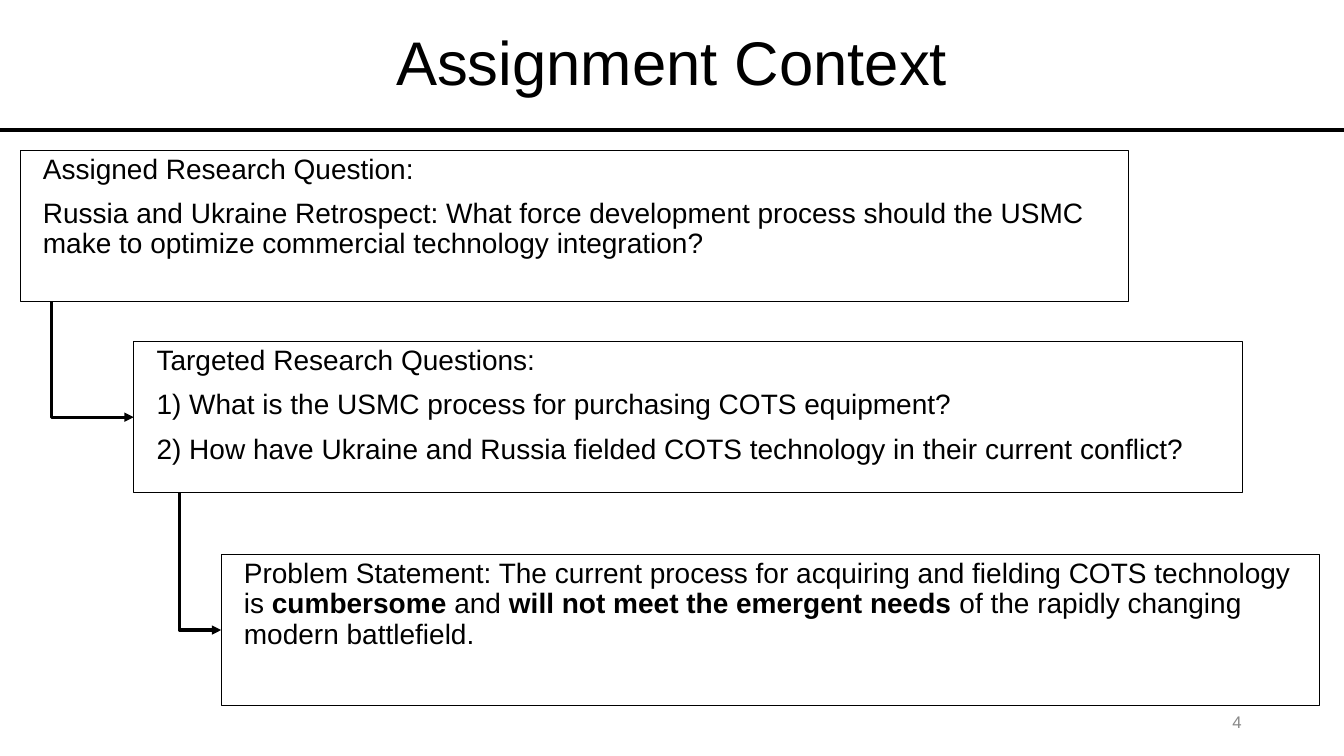
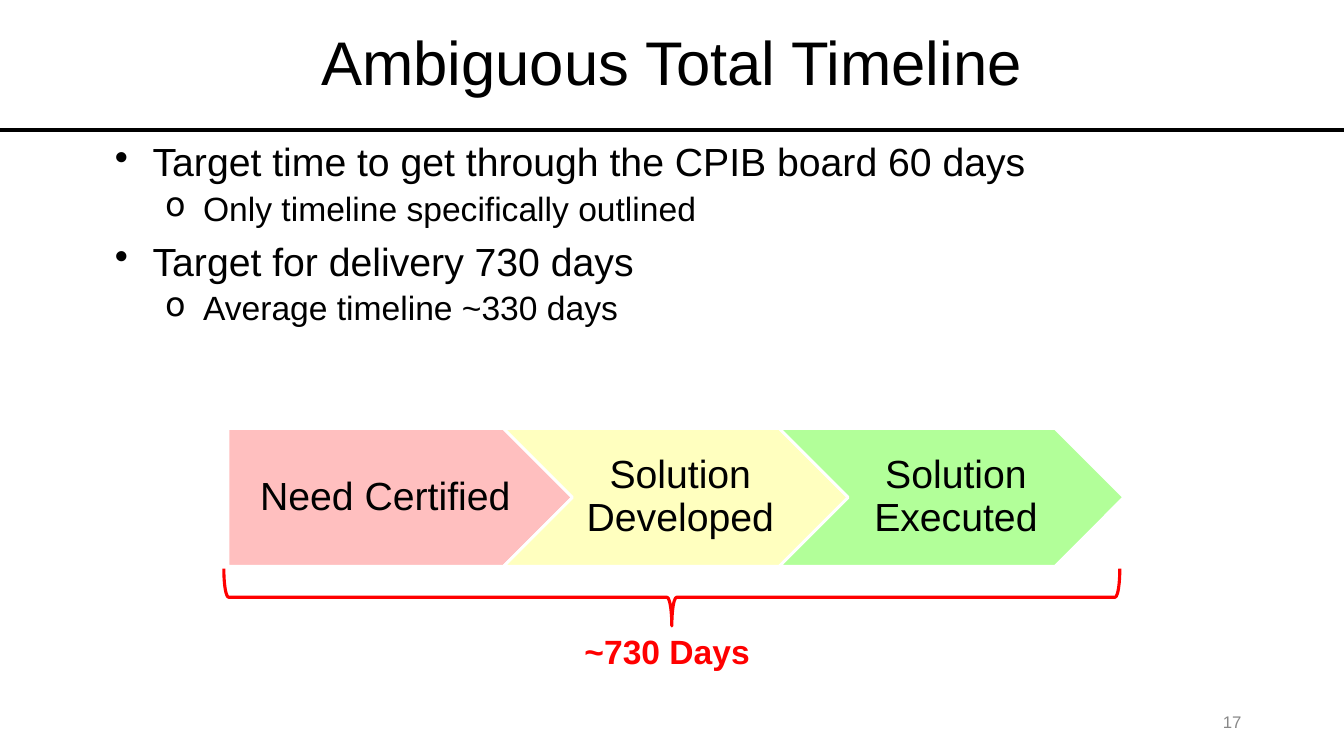
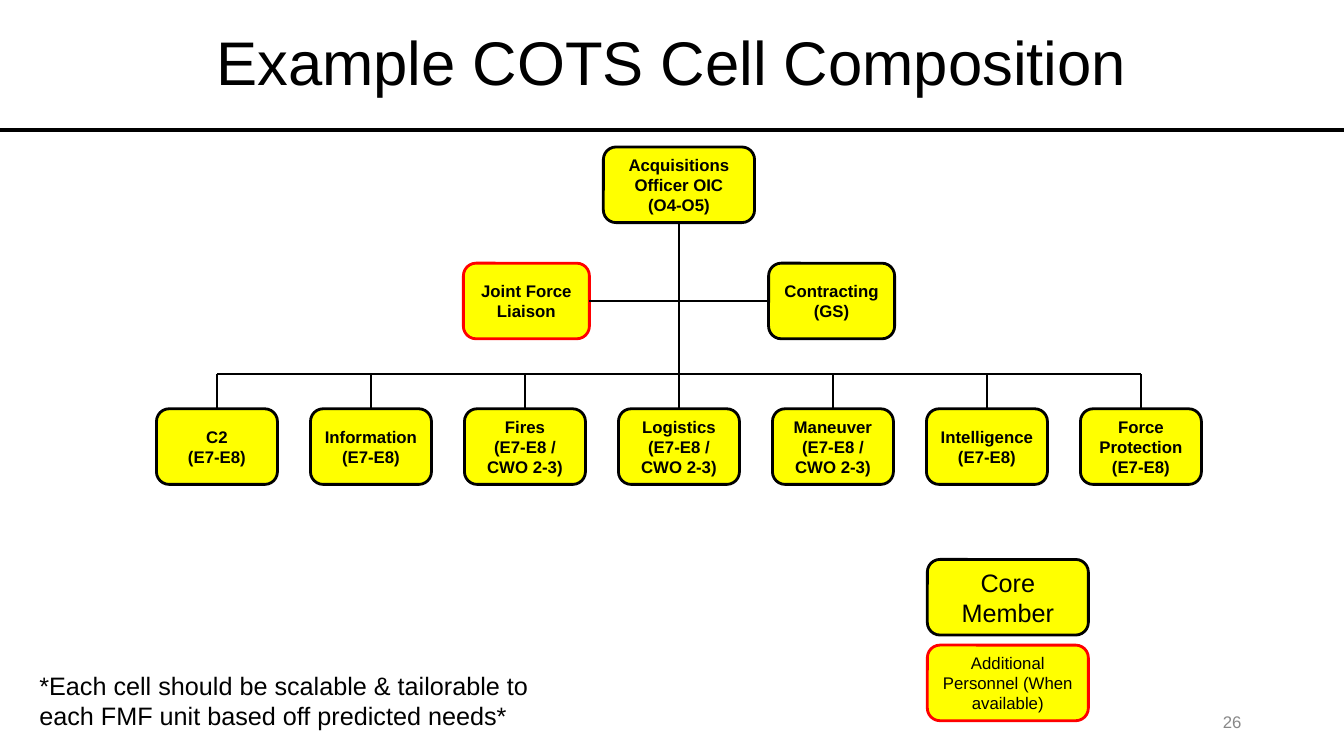
from pptx import Presentation
from pptx.dml.color import RGBColor
from pptx.enum.shapes import MSO_CONNECTOR, MSO_SHAPE
from pptx.enum.text import MSO_ANCHOR, MSO_AUTO_SIZE, PP_ALIGN
from pptx.oxml.ns import qn
from pptx.util import Pt
from lxml.etree import SubElement

COLORS = {
    "black": "000000",
    "white": "FFFFFF",
    "gray": "888888",
    "red": "FF0000",
    "yellow": "FFFF00",
    "pink": "FFBFBF",
    "cream": "FFFFBF",
    "green": "B2FF99",
}
FONT = "Arial"
SLIDE_WIDTH, SLIDE_HEIGHT = 960, 540
RULE_TOP = 93


def rgb(color):
    return RGBColor.from_string(COLORS[color])


def add_run(paragraph, text, size, color="black", bold=False):
    run = paragraph.add_run()
    run.text = text
    run.font.name = FONT
    run.font.size = Pt(size)
    run.font.bold = bold
    run.font.color.rgb = rgb(color)


def next_paragraph(frame, index):
    return frame.add_paragraph() if index else frame.paragraphs[0]


def write_text(shape, paragraphs, size, color="black", bold=False, align=PP_ALIGN.LEFT,
               anchor=MSO_ANCHOR.TOP, line_spacing=1.0, gap=0):
    frame = shape.text_frame
    frame.word_wrap = True
    frame.auto_size = MSO_AUTO_SIZE.NONE
    frame.vertical_anchor = anchor
    for index, runs in enumerate(paragraphs):
        paragraph = next_paragraph(frame, index)
        paragraph.alignment = align
        paragraph.line_spacing = line_spacing
        paragraph.space_before = Pt(gap if index else 0)
        if isinstance(runs, str):
            runs = [(runs, bold)]
        for text, run_bold in runs:
            add_run(paragraph, text, size, color, run_bold)


def add_box(slide, kind, left, top, width, height, fill=None, line="black", line_width=2):
    shape = slide.shapes.add_shape(kind, Pt(left), Pt(top), Pt(width), Pt(height))
    shape.shadow.inherit = False
    if fill:
        shape.fill.solid()
        shape.fill.fore_color.rgb = rgb(fill)
    else:
        shape.fill.background()
    shape.line.color.rgb = rgb(line)
    shape.line.width = Pt(line_width)
    return shape


def add_label(slide, left, top, width, height, text, size, **style):
    box = slide.shapes.add_textbox(Pt(left), Pt(top), Pt(width), Pt(height))
    write_text(box, [text], size, **style)


def add_line(slide, start, end, width=1.5, kind=MSO_CONNECTOR.STRAIGHT):
    connector = slide.shapes.add_connector(kind, *(Pt(value) for value in (*start, *end)))
    connector.line.color.rgb = rgb("black")
    connector.line.width = Pt(width)
    SubElement(connector._element.spPr, qn("a:effectLst"))
    return connector


def add_down_right_arrow(slide, start, end):
    run, drop = end[0] - start[0], end[1] - start[1]
    left = (start[0] + end[0] - drop) / 2
    top = (start[1] + end[1] - run) / 2
    arrow = add_line(slide, (left + drop, top), (left, top + run), 2.25, MSO_CONNECTOR.ELBOW)
    properties = arrow._element.spPr
    properties.find(qn("a:xfrm")).set("rot", str(270 * 60000))
    properties.find(qn("a:prstGeom")).set("prst", "bentConnector2")
    SubElement(properties.find(qn("a:ln")), qn("a:tailEnd"), type="triangle")


def add_bullets(slide, left, top, width, height, items):
    styles = [("•", 36, 28, 10), ("o", 72, 24, 5)]
    frame = slide.shapes.add_textbox(Pt(left), Pt(top), Pt(width), Pt(height)).text_frame
    frame.word_wrap = True
    for index, (level, text) in enumerate(items):
        mark, indent, size, gap = styles[level]
        paragraph = next_paragraph(frame, index)
        paragraph.level = level
        properties = paragraph._p.get_or_add_pPr()
        properties.set("marL", str(Pt(indent)))
        properties.set("indent", str(-Pt(27)))
        bullet_color = SubElement(properties, qn("a:buClr"))
        SubElement(bullet_color, qn("a:srgbClr"), val=COLORS["black"])
        SubElement(properties, qn("a:buChar"), char=mark)
        paragraph.line_spacing = 0.9
        paragraph.space_before = Pt(gap if index else 0)
        add_run(paragraph, text, size)


def add_titled_slide(presentation, title, number):
    slide = presentation.slides.add_slide(presentation.slide_layouts[5])
    add_line(slide, (0, RULE_TOP), (SLIDE_WIDTH, RULE_TOP), 3)
    placeholder = slide.shapes.title
    placeholder.left, placeholder.top = Pt(66), Pt(0)
    placeholder.width, placeholder.height = Pt(828), Pt(RULE_TOP)
    write_text(placeholder, [title], 44, align=PP_ALIGN.CENTER,
               anchor=MSO_ANCHOR.MIDDLE, line_spacing=0.9)
    add_label(slide, 678, 501, 216, 28.8, number, 12, color="gray",
              align=PP_ALIGN.RIGHT, anchor=MSO_ANCHOR.MIDDLE)
    return slide


def build_context(presentation):
    slide = add_titled_slide(presentation, "Assignment Context", "4")
    height = 108
    statements = [
        (14.4, 107.4, 792, [
            "Assigned Research Question:",
            "Russia and Ukraine Retrospect: What force development process should the USMC "
            "make to optimize commercial technology integration?",
        ]),
        (95.6, 244, 792, [
            "Targeted Research Questions:",
            "1) What is the USMC process for purchasing COTS equipment?",
            "2) How have Ukraine and Russia fielded COTS technology in their current conflict?",
        ]),
        (158, 396, 784.8, [[
            ("Problem Statement: The current process for acquiring and fielding COTS "
             "technology is ", False),
            ("cumbersome", True),
            (" and ", False),
            ("will not meet the emergent needs", True),
            (" of the rapidly changing modern battlefield.", False),
        ]]),
    ]
    for left, top, width, paragraphs in statements:
        box = add_box(slide, MSO_SHAPE.RECTANGLE, left, top, width, height, line_width=0.75)
        box.text_frame.margin_left = Pt(16.2)
        write_text(box, paragraphs, 20, line_spacing=0.9, gap=10)
    for arrow_left, upper, lower in zip((36.8, 128.2), statements, statements[1:]):
        add_down_right_arrow(slide, (arrow_left, upper[1] + height),
                             (lower[0], lower[1] + height / 2))


def build_timeline(presentation):
    slide = add_titled_slide(presentation, "Ambiguous Total Timeline", "17")
    add_bullets(slide, 66, 98.6, 828, 137.5, [
        (0, "Target time to get through the CPIB board 60 days"),
        (1, "Only timeline specifically outlined"),
        (0, "Target for delivery 730 days"),
        (1, "Average timeline ~330 days"),
    ])
    steps = [
        (MSO_SHAPE.PENTAGON, "Need Certified", "pink", 6),
        (MSO_SHAPE.CHEVRON, "Solution Developed", "cream", 9),
        (MSO_SHAPE.CHEVRON, "Solution Executed", "green", 9),
    ]
    for index, (kind, text, fill, margin) in enumerate(steps):
        step = add_box(slide, kind, 162.8 + index * 196.9, 306, 246.2, 98.5, fill, "white")
        step.text_frame.margin_left = Pt(margin)
        step.text_frame.margin_right = Pt(2.8)
        write_text(step, [text], 28, align=PP_ALIGN.CENTER,
                   anchor=MSO_ANCHOR.MIDDLE, line_spacing=0.9)
    brace = add_box(slide, MSO_SHAPE.LEFT_BRACE, 459.4, 106.6, 41, 640, line="red", line_width=2.25)
    brace.rotation = 270
    add_label(slide, 410.4, 447, 140, 36, "~730 Days", 24, color="red", bold=True)


def add_member(slide, left, top, width, paragraphs, line="black", size=12, bold=True):
    member = add_box(slide, MSO_SHAPE.ROUNDED_RECTANGLE, left, top, width, 54, "yellow", line)
    write_text(member, paragraphs, size, bold=bold, align=PP_ALIGN.CENTER,
               anchor=MSO_ANCHOR.MIDDLE)
    return member


def build_composition(presentation):
    slide = add_titled_slide(presentation, "Example COTS Cell Composition", "26")
    trunk, bus_top, side_middle = 485, 267, 215
    officer = add_member(slide, trunk - 54, 105, 108, ["Acquisitions Officer OIC", "(O4-O5)"])
    add_line(slide, (trunk, 159), (trunk, bus_top)).begin_connect(officer, 2)

    side_members = [
        (331, ["Joint Force Liaison"], "red", 3),
        (549, ["Contracting", "(GS)"], "black", 1),
    ]
    for left, paragraphs, line, side in side_members:
        member = add_member(slide, left, side_middle - 27, 90, paragraphs, line)
        branch = add_line(slide, (left, side_middle), (trunk, side_middle))
        branch.begin_connect(member, side)

    enlisted, warrant = "(E7-E8)", "(E7-E8 / CWO 2-3)"
    sections = [
        ("C2", enlisted),
        ("Information", enlisted),
        ("Fires", warrant),
        ("Logistics", warrant),
        ("Maneuver", warrant),
        ("Intelligence", enlisted),
        ("Force Protection", enlisted),
    ]
    width, top = 86.4, 292
    centers = [trunk + (index - 3) * 110 for index in range(len(sections))]
    add_line(slide, (centers[0], bus_top), (centers[-1], bus_top))
    for center, section in zip(centers, sections):
        member = add_member(slide, center - width / 2, top, width, section)
        add_line(slide, (center, bus_top), (center, top)).end_connect(member, 0)

    legend = [
        ("Core Member", "black", 18),
        ("Additional Personnel (When available)", "red", 12),
    ]
    for index, (text, line, size) in enumerate(legend):
        add_member(slide, 662.4, 399.6 + index * 61.2, 115, [text], line, size, False)
    add_label(slide, 21, 475.2, 373, 51,
              "*Each cell should be scalable & tailorable to each FMF unit "
              "based off predicted needs*", 18)


def main():
    presentation = Presentation()
    presentation.slide_width = Pt(SLIDE_WIDTH)
    presentation.slide_height = Pt(SLIDE_HEIGHT)
    build_context(presentation)
    build_timeline(presentation)
    build_composition(presentation)
    presentation.save("out.pptx")


if __name__ == "__main__":
    main()
